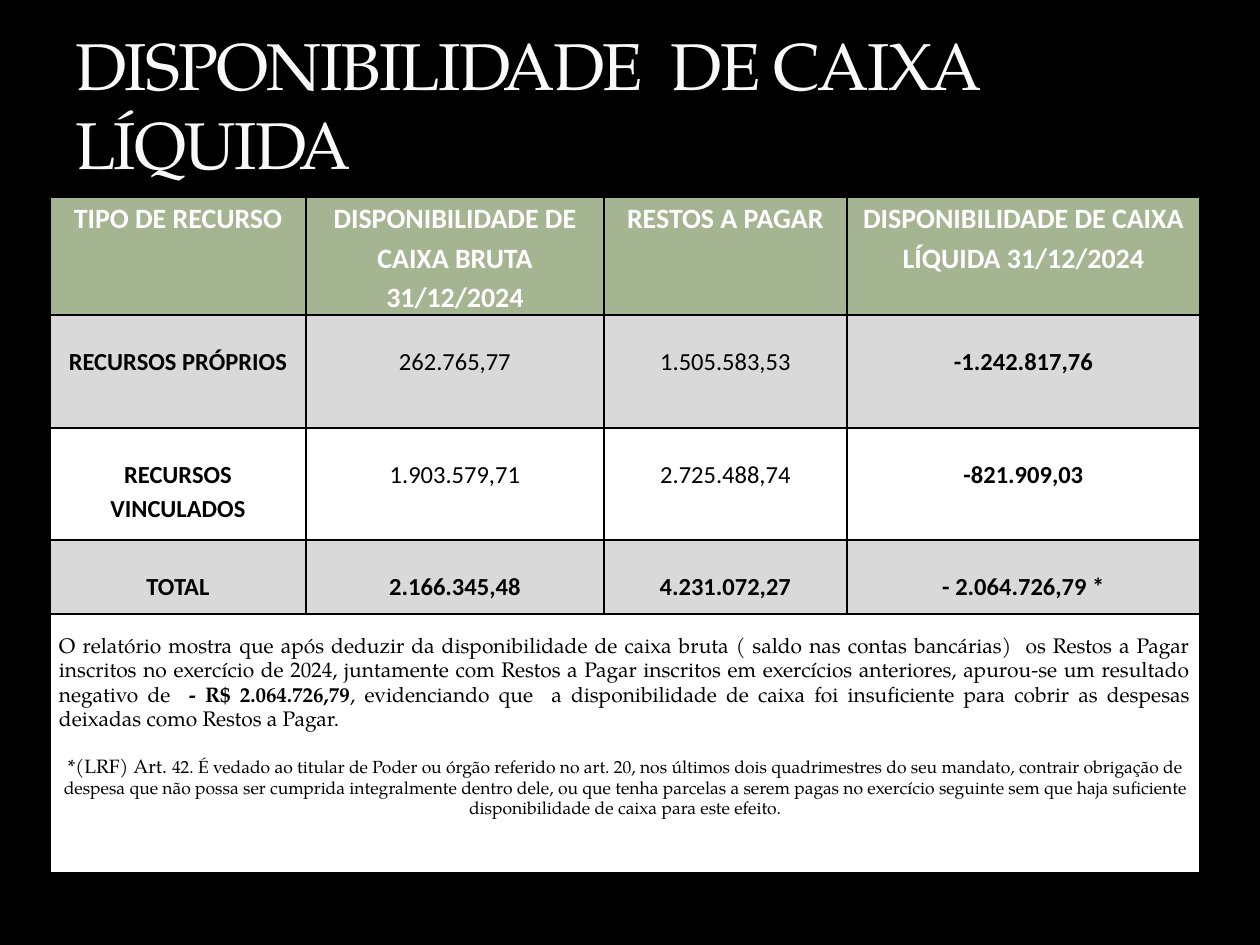
from dataclasses import dataclass

from lxml import etree
from pptx import Presentation
from pptx.dml.color import RGBColor
from pptx.enum.text import MSO_ANCHOR, PP_ALIGN
from pptx.oxml.ns import qn
from pptx.util import Emu, Pt

CENTER, JUSTIFY = PP_ALIGN.CENTER, PP_ALIGN.JUSTIFY
BOTTOM = MSO_ANCHOR.BOTTOM
PX_PER_INCH = 126


@dataclass(frozen=True)
class Theme:
    background: str = "000000"
    title: str = "F9F9F9"
    header: str = "A5B592"
    band: str = "D9D9D9"
    white: str = "FFFFFF"
    black: str = "000000"
    serif: str = "TeX Gyre Pagella"
    sans: str = "Calibri"
    title_size: float = 37.8
    header_size: int = 16
    body_size: int = 14
    note_size: int = 12
    law_size: int = 11
    law_text_size: int = 10


THEME = Theme()


@dataclass(frozen=True)
class Run:
    text: str
    size: float
    bold: bool = False
    color: str = THEME.black
    font: str = THEME.sans


@dataclass(frozen=True)
class TableRow:
    texts: tuple[str, ...]
    height: int
    fill: str
    bold: tuple[bool, ...]
    size: int = THEME.body_size
    color: str = THEME.black
    top: int = 28


def px(value: int) -> Emu:
    return Emu(round(value * 914400 / PX_PER_INCH))


def rgb(value: str) -> RGBColor:
    return RGBColor.from_string(value)


def set_all(target, values: dict) -> None:
    for name, value in values.items():
        setattr(target, name, value)


def write_runs(paragraph, runs: list[Run], paragraph_format: dict) -> None:
    set_all(paragraph, paragraph_format)
    for item in runs:
        run = paragraph.add_run()
        run.text = item.text
        set_all(run.font, {"size": Pt(item.size), "bold": item.bold, "name": item.font})
        run.font.color.rgb = rgb(item.color)


def style_cell(cell, fill: str, top: int) -> None:
    properties = cell._tc.get_or_add_tcPr()
    for side in ("lnL", "lnR", "lnT", "lnB"):
        line = etree.SubElement(properties, qn(f"a:{side}"), w=str(Pt(1)))
        solid = etree.SubElement(line, qn("a:solidFill"))
        etree.SubElement(solid, qn("a:srgbClr"), val=THEME.black)
    cell.fill.solid()
    cell.fill.fore_color.rgb = rgb(fill)
    set_all(cell, {"margin_left": px(9), "margin_right": px(9),
                   "margin_top": px(top), "margin_bottom": 0})


def add_title(slide, text: str) -> None:
    frame = slide.shapes.add_textbox(px(63), px(21), px(1134), px(168)).text_frame
    set_all(frame, {"word_wrap": True, "vertical_anchor": BOTTOM})
    paragraph = frame.paragraphs[0]
    write_runs(paragraph, [Run(text, THEME.title_size, False, THEME.title, THEME.serif)], {})
    paragraph.runs[0].font._element.set("spc", "-100")


CELL_FORMAT = {"alignment": CENTER, "line_spacing": 1.15}
COLUMN_WIDTHS = (256, 298, 243, 353)
NOTE_HEIGHT = 259
ALL_BOLD = (True,) * 4
OUTER_BOLD = (True, False, False, True)

ROWS = (
    TableRow(("TIPO DE RECURSO", "DISPONIBILIDADE DE CAIXA BRUTA 31/12/2024",
              "RESTOS A PAGAR", "DISPONIBILIDADE DE CAIXA LÍQUIDA 31/12/2024"),
             118, THEME.header, ALL_BOLD, THEME.header_size, THEME.white, 0),
    TableRow(("RECURSOS PRÓPRIOS", "262.765,77", "1.505.583,53", "-1.242.817,76"),
             113, THEME.band, OUTER_BOLD),
    TableRow(("RECURSOS VINCULADOS", "1.903.579,71", "2.725.488,74", "-821.909,03"),
             112, THEME.white, OUTER_BOLD),
    TableRow(("TOTAL", "2.166.345,48", "4.231.072,27", "- 2.064.726,79 *"),
             74, THEME.band, ALL_BOLD),
)

NOTE = (
    ("O relatório mostra que após deduzir da disponibilidade de caixa bruta ( saldo nas "
     "contas bancárias)  os Restos a Pagar inscritos no exercício de 2024, juntamente com "
     "Restos a Pagar inscritos em exercícios anteriores, apurou-se um resultado negativo de  ",
     THEME.note_size, False),
    ("- R$ 2.064.726,79", THEME.note_size, True),
    (", evidenciando que  a disponibilidade de caixa foi insuficiente para cobrir as "
     "despesas deixadas como Restos a Pagar.", THEME.note_size, False),
)
LAW = (
    ("*(LRF) Art. ", THEME.law_size, False),
    ("42. É vedado ao titular de Poder ou órgão referido no art. 20, nos últimos dois "
     "quadrimestres do seu mandato, contrair obrigação de despesa que não possa ser cumprida "
     "integralmente dentro dele, ou que tenha parcelas a serem pagas no exercício seguinte sem "
     "que haja suficiente disponibilidade de caixa para este efeito.",
     THEME.law_text_size, False),
)


def serif_runs(parts: tuple) -> list[Run]:
    return [Run(text, size, bold, font=THEME.serif) for text, size, bold in parts]


def add_cash_table(slide) -> None:
    heights = [row.height for row in ROWS] + [NOTE_HEIGHT]
    table = slide.shapes.add_table(len(heights), len(COLUMN_WIDTHS), px(50), px(197),
                                   px(sum(COLUMN_WIDTHS)), px(sum(heights))).table
    for column, width in zip(table.columns, COLUMN_WIDTHS):
        column.width = px(width)
    for table_row, height in zip(table.rows, heights):
        table_row.height = px(height)

    # Header and figures
    for row, table_row in zip(ROWS, table.rows):
        for cell, text, bold in zip(table_row.cells, row.texts, row.bold):
            style_cell(cell, row.fill, row.top)
            write_runs(cell.text_frame.paragraphs[0],
                       [Run(text, row.size, bold, row.color)], CELL_FORMAT)

    # Explanatory note across all columns
    last = len(ROWS)
    note = table.cell(last, 0)
    note.merge(table.cell(last, len(COLUMN_WIDTHS) - 1))
    for cell in table.rows[last].cells:
        style_cell(cell, THEME.white, 21)
    write_runs(note.text_frame.paragraphs[0], serif_runs(NOTE),
               CELL_FORMAT | {"alignment": JUSTIFY})
    write_runs(note.text_frame.add_paragraph(), serif_runs(LAW),
               CELL_FORMAT | {"space_before": Pt(14)})


def main() -> None:
    presentation = Presentation()
    set_all(presentation, {"slide_width": px(1260), "slide_height": px(945)})
    slide = presentation.slides.add_slide(presentation.slide_layouts[6])
    slide.background.fill.solid()
    slide.background.fill.fore_color.rgb = rgb(THEME.background)
    add_title(slide, "DISPONIBILIDADE  DE CAIXA LÍQUIDA")
    add_cash_table(slide)
    presentation.save("out.pptx")


if __name__ == "__main__":
    main()
